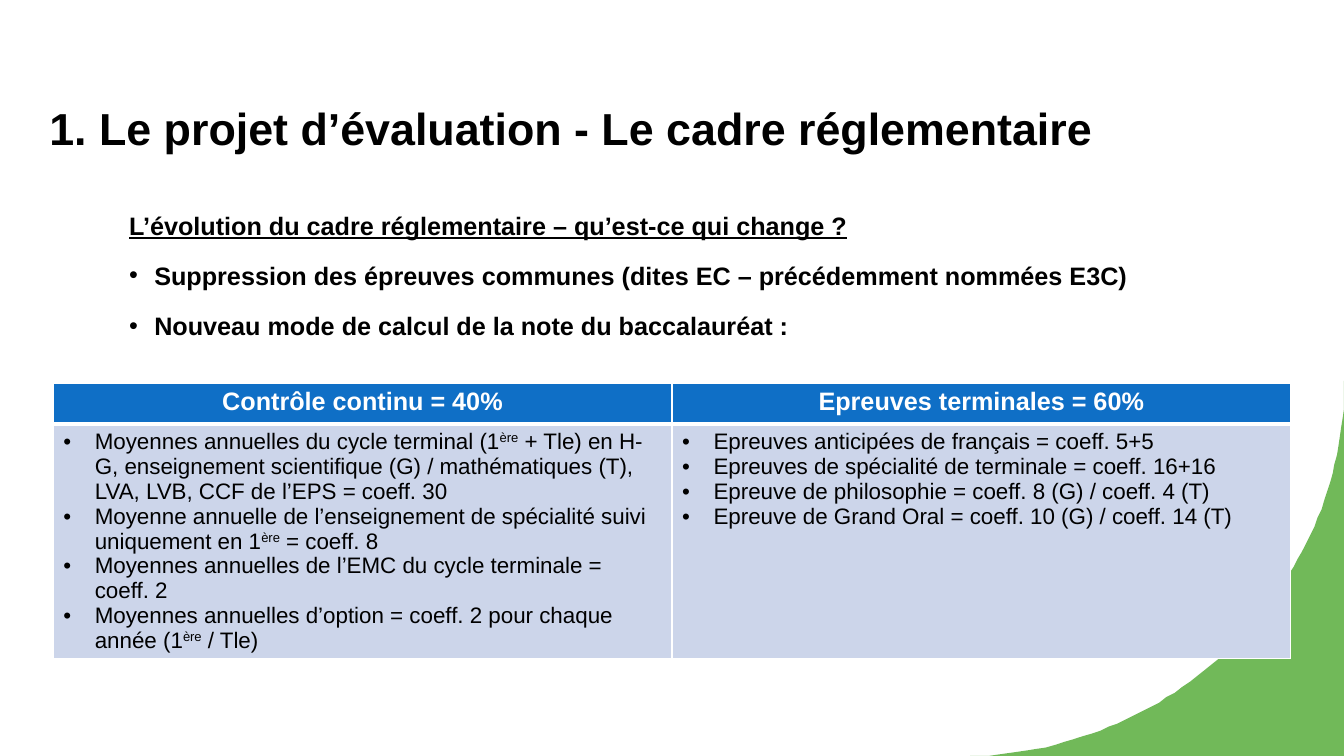
import lxml.etree
import pptx
import pptx.dml.color
import pptx.enum.text
import pptx.oxml.ns
import pptx.util

Pt = pptx.util.Pt
ALIGN = pptx.enum.text.PP_ALIGN
ANCHOR = pptx.enum.text.MSO_ANCHOR

BLACK, WHITE = "000000", "FFFFFF"
GREEN, BLUE, PALE_BLUE = "71B959", "0F6FC6", "CCD5EA"

BODY_LINES = [
    "L’évolution du cadre réglementaire – qu’est-ce qui change ?",
    "Suppression des épreuves communes (dites EC – précédemment nommées E3C)",
    "Nouveau mode de calcul de la note du baccalauréat :",
]
# Text between carets is superscript.
GRADING = {
    "Contrôle continu = 40%": [
        "Moyennes annuelles du cycle terminal (1^ère^ + Tle) en H-G, enseignement "
        "scientifique (G) / mathématiques (T), LVA, LVB, CCF de l’EPS = coeff. 30",
        "Moyenne annuelle de l’enseignement de spécialité suivi uniquement en "
        "1^ère^ = coeff. 8",
        "Moyennes annuelles de l’EMC du cycle terminale = coeff. 2",
        "Moyennes annuelles d’option = coeff. 2 pour chaque année (1^ère^ / Tle)",
    ],
    "Epreuves terminales = 60%": [
        "Epreuves anticipées de français = coeff. 5+5",
        "Epreuves de spécialité de terminale = coeff. 16+16",
        "Epreuve de philosophie = coeff. 8 (G) / coeff. 4 (T)",
        "Epreuve de Grand Oral = coeff. 10 (G) / coeff. 14 (T)",
    ],
}


def color(hex_code):
    return pptx.dml.color.RGBColor.from_string(hex_code)


def add_xml(parent, tag, **attributes):
    return lxml.etree.SubElement(parent, pptx.oxml.ns.qn(tag), attributes)


def set_bullet(paragraph, indent):
    """Give a hanging bullet, or none when the indent is zero."""
    properties = paragraph._p.get_or_add_pPr()
    properties.set("marL", str(Pt(indent)))
    properties.set("indent", str(-Pt(indent)))
    if indent:
        add_xml(properties, "a:buFont", typeface="Arial")
        add_xml(properties, "a:buChar", char="•")
    else:
        add_xml(properties, "a:buNone")


def write(frame, text, size=18, bold=False, underline=False, font_color=BLACK,
          align=ALIGN.LEFT, line_spacing=1.0, space_before=0, indent=0):
    """Add one paragraph, filling the frame's empty first one if there is one."""
    first = frame.paragraphs[0]
    paragraph = frame.add_paragraph() if first.runs else first
    paragraph.alignment = align
    paragraph.line_spacing = line_spacing
    paragraph.space_before = Pt(space_before)
    set_bullet(paragraph, indent)
    for index, part in enumerate(text.split("^")):
        run = paragraph.add_run()
        run.text = part
        run.font.name = "Arial"
        run.font.size = Pt(size)
        run.font.bold = bold
        run.font.underline = underline
        run.font.color.rgb = color(font_color)
        if index % 2:
            run._r.get_or_add_rPr().set("baseline", "30000")


def place(placeholder, left, top, width, height, anchor):
    placeholder.left, placeholder.top = Pt(left), Pt(top)
    placeholder.width, placeholder.height = Pt(width), Pt(height)
    frame = placeholder.text_frame
    frame.word_wrap = True
    frame.auto_size = pptx.enum.text.MSO_AUTO_SIZE.NONE
    frame.vertical_anchor = anchor
    return frame


def curve_points(start, control_1, control_2, end, steps=60):
    """Sample a cubic curve."""
    for step in range(1, steps + 1):
        t = step / steps
        weights = ((1 - t) ** 3, 3 * t * (1 - t) ** 2, 3 * t * t * (1 - t), t ** 3)
        yield tuple(
            sum(weight * value for weight, value in zip(weights, values))
            for values in zip(start, control_1, control_2, end)
        )


def add_corner(slide):
    arc_start = (699, 540)
    arc = curve_points(arc_start, (840, 533.5), (952.5, 422.5), (960, 285))
    points = [(960, 540), (693, 540), arc_start, *arc, (960, 272)]
    builder = slide.shapes.build_freeform(960, 272, scale=Pt(1))
    builder.add_line_segments(points, close=True)
    shape = builder.convert_to_shape()
    shape.shadow.inherit = False
    shape.fill.solid()
    shape.fill.fore_color.rgb = color(GREEN)
    shape.line.fill.background()
    shape.element.getparent().insert(2, shape.element)  # send to back


def style_cell(cell, fill, bottom_width):
    properties = cell._tc.get_or_add_tcPr()
    for side in "LRTB":
        width = bottom_width if side == "B" else 1
        border = add_xml(properties, f"a:ln{side}", w=str(Pt(width)))
        add_xml(add_xml(border, "a:solidFill"), "a:srgbClr", val=WHITE)
    cell.fill.solid()
    cell.fill.fore_color.rgb = color(fill)


def add_grading_table(slide):
    frame = slide.shapes.add_table(2, len(GRADING), Pt(38), Pt(273.6), Pt(884), Pt(196))
    table = frame.table
    table.rows[0].height, table.rows[1].height = Pt(29.5), Pt(166.5)
    for column, (heading, items) in enumerate(GRADING.items()):
        header, content = table.cell(0, column), table.cell(1, column)
        style_cell(header, BLUE, bottom_width=3)
        style_cell(content, PALE_BLUE, bottom_width=1)
        write(header.text_frame, heading, bold=True, font_color=WHITE,
              align=ALIGN.CENTER)
        for item in items:
            write(content.text_frame, item, size=16, indent=22.5)


def main():
    presentation = pptx.Presentation()
    presentation.slide_width, presentation.slide_height = Pt(960), Pt(540)
    slide = presentation.slides.add_slide(presentation.slide_layouts[1])

    add_corner(slide)
    title = place(slide.shapes.title, 28, 57, 907, 57, ANCHOR.BOTTOM)
    write(title, "1. Le projet d’évaluation - Le cadre réglementaire",
          size=32, bold=True, line_spacing=1.1)
    body = place(slide.placeholders[1], 85, 142, 783, 325, ANCHOR.TOP)
    for index, line in enumerate(BODY_LINES):
        write(body, line, bold=True, underline=index == 0, line_spacing=1.2,
              space_before=10, indent=18 if index else 0)
    add_grading_table(slide)

    presentation.save("out.pptx")


if __name__ == "__main__":
    main()
